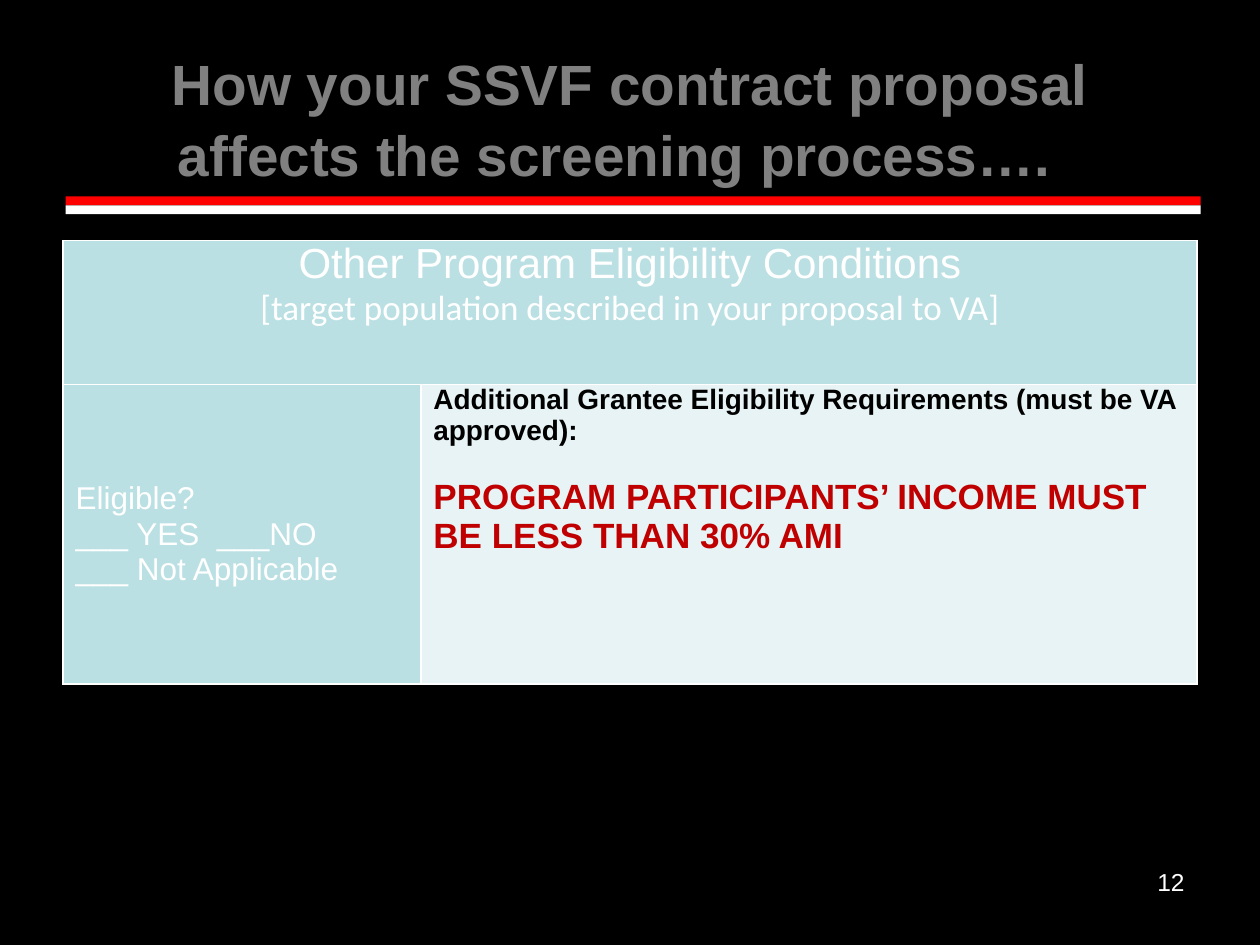
from lxml import etree
from pptx import Presentation
from pptx import util as u
from pptx.dml.color import RGBColor
from pptx.enum import shapes, text
from pptx.oxml.ns import qn

ALIGN = text.PP_ALIGN
ANCHOR = text.MSO_ANCHOR
WHITE = "FFFFFF"
TEAL = "BBE0E3"


def colour(value):
    return RGBColor.from_string(value)


def paint(fill, value):
    fill.solid()
    fill.fore_color.rgb = colour(value)


def write(frame, words, first=False, size=18, font="Arial", ink=WHITE,
          bold=False, align=ALIGN.LEFT, before=0, spacing=1.0):
    para = frame.paragraphs[0] if first else frame.add_paragraph()
    para.alignment = align
    para.space_before = u.Pt(before)
    para.line_spacing = spacing
    span = para.add_run()
    span.text = words
    span.font.size = u.Pt(size)
    span.font.name = font
    span.font.bold = bold
    span.font.color.rgb = colour(ink)


def add_title(page, left, top, width, height):
    title = page.shapes.title
    title.left, title.top, title.width, title.height = left, top, width, height
    frame = title.text_frame
    frame.auto_size = text.MSO_AUTO_SIZE.NONE
    frame.word_wrap = True
    frame.vertical_anchor = ANCHOR.MIDDLE
    write(frame, "How your SSVF contract proposal affects the screening process….  ",
          first=True, size=32.4, ink="808080", bold=True, align=ALIGN.CENTER, spacing=1.05)


def add_rule(page, left, top, width, height):
    band = height // 2
    for index, fill in enumerate(("FF0000", WHITE)):
        bar = page.shapes.add_shape(shapes.MSO_SHAPE.RECTANGLE, left, top + index * band, width, band)
        bar.shadow.inherit = False
        paint(bar.fill, fill)
        bar.line.fill.background()


def style_cell(cell, fill, anchor):
    cell.margin_left = cell.margin_right = u.Inches(0.1)
    cell.margin_top = cell.margin_bottom = 0
    cell.vertical_anchor = anchor
    properties = cell._tc.get_or_add_tcPr()
    for side in ("a:lnL", "a:lnR", "a:lnT", "a:lnB"):
        line = etree.SubElement(properties, qn(side), w=str(u.Pt(1)))
        solid = etree.SubElement(line, qn("a:solidFill"))
        etree.SubElement(solid, qn("a:srgbClr"), val=WHITE)
    paint(cell.fill, fill)


def add_conditions(page, left, top, width, height):
    table = page.shapes.add_table(2, 2, left, top, width, height).table
    table.columns[0].width = u.Inches(2.84)
    table.columns[1].width = width - table.columns[0].width
    table.rows[0].height = u.Inches(1.14)
    table.rows[1].height = height - table.rows[0].height

    header, answer, requirement = table.cell(0, 0), table.cell(1, 0), table.cell(1, 1)
    header.merge(table.cell(0, 1))
    style_cell(header, TEAL, ANCHOR.TOP)
    style_cell(table.cell(0, 1), TEAL, ANCHOR.TOP)
    style_cell(answer, TEAL, ANCHOR.MIDDLE)
    style_cell(requirement, "E7F3F4", ANCHOR.TOP)

    write(header.text_frame, "Other Program Eligibility Conditions",
          first=True, size=24, align=ALIGN.CENTER)
    write(header.text_frame, "[target population described in your proposal to VA]",
          size=20, font="Calibri", align=ALIGN.CENTER)
    for index, words in enumerate(("Eligible?", "___ YES  ___NO", "___ Not Applicable")):
        write(answer.text_frame, words, first=index == 0)
    write(requirement.text_frame, "Additional Grantee Eligibility Requirements (must be VA approved):",
          first=True, size=16, ink="000000", bold=True)
    write(requirement.text_frame, "PROGRAM PARTICIPANTS’ INCOME MUST BE LESS THAN 30% AMI",
          size=20, ink="C00000", bold=True, before=18)


def add_page_number(page, left, top, width, height):
    frame = page.shapes.add_textbox(left, top, width, height).text_frame
    frame.word_wrap = True
    write(frame, "12", first=True, size=14, align=ALIGN.RIGHT)


def main():
    deck = Presentation()
    deck.slide_width, deck.slide_height = u.Inches(10), u.Inches(7.5)
    page = deck.slides.add_slide(deck.slide_layouts.get_by_name("Title Only"))
    paint(page.background.fill, "000000")
    add_rule(page, u.Inches(0.52), u.Inches(1.56), u.Inches(9.01), u.Inches(0.14))
    add_title(page, u.Inches(0.5), u.Inches(0.3), u.Inches(9), u.Inches(1.25))
    add_conditions(page, u.Inches(0.5), u.Inches(1.91), u.Inches(9), u.Inches(3.52))
    add_page_number(page, u.Inches(7.17), u.Inches(6.83), u.Inches(2.33), u.Inches(0.52))
    deck.save("out.pptx")


if __name__ == "__main__":
    main()
